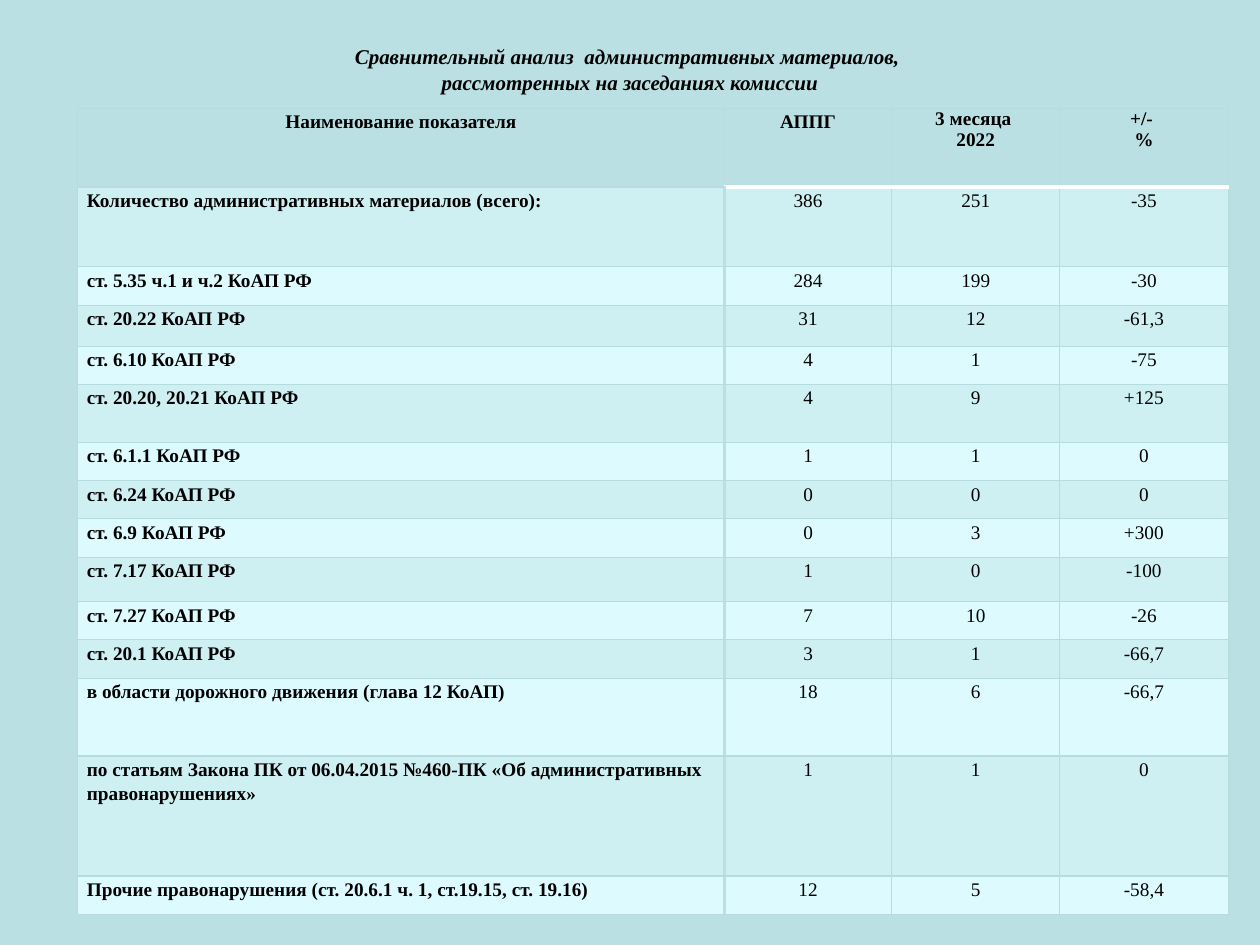
from lxml import etree
from pptx import Presentation, util as u
from pptx.dml.color import RGBColor
from pptx.enum import text
from pptx.oxml import ns

THEME = {
    "font": "Times New Roman",
    "title_size": 12,
    "table_size": 11,
    "ink": "000000",
    "background": "BBE0E3",
    "odd_row": "CFF0F3",
    "even_row": "DDFBFF",
    "grid": ("B6DCDF", 0.75),
    "label_divider": ("BBE0E3", 2),
    "header_rule": ("FFFFFF", 2),
}
TITLE = "Сравнительный анализ  административных материалов, \vрассмотренных на заседаниях комиссии"
TITLE_BOX = {"left": 1.27, "top": 0.76, "width": 22.86, "height": 3.18}
TABLE_LEFT, TABLE_TOP = 1.57, 2.18
COLUMN_WIDTHS = (13.03, 3.38, 3.38, 3.4)
LEFT_ALIGNED_ROWS = (2, 13)
ROWS = [
    (1.59, "Наименование показателя", "АППГ", "3 месяца \n2022", "+/- \n%"),
    (1.61, "Количество административных материалов (всего):", "386", "251", "-35"),
    (0.77, "ст. 5.35 ч.1 и ч.2 КоАП РФ", "284", "199", "-30"),
    (0.83, "ст. 20.22 КоАП РФ", "31", "12", "-61,3"),
    (0.77, "ст. 6.10 КоАП РФ", "4", "1", "-75"),
    (1.17, "ст. 20.20, 20.21 КоАП РФ", "4", "9", "+125"),
    (0.77, "ст. 6.1.1 КоАП РФ", "1", "1", "0"),
    (0.77, "ст. 6.24 КоАП РФ", "0", "0", "0"),
    (0.77, "ст. 6.9 КоАП РФ", "0", "3", "+300"),
    (0.9, "ст. 7.17 КоАП РФ", "1", "0", "-100"),
    (0.77, "ст. 7.27 КоАП РФ", "7", "10", "-26"),
    (0.77, "ст. 20.1 КоАП РФ", "3", "1", "-66,7"),
    (1.57, "в области дорожного движения (глава 12 КоАП)", "18", "6", "-66,7"),
    (2.42, "по статьям Закона ПК от 06.04.2015 №460-ПК «Об административных правонарушениях»",
     "1", "1", "0"),
    (0.77, "Прочие правонарушения (ст. 20.6.1 ч. 1, ст.19.15, ст. 19.16)", "12", "5", "-58,4"),
]


def apply(target, values):
    for name, value in values.items():
        setattr(target, name, value)


def paint(fill, color):
    fill.solid()
    fill.fore_color.rgb = RGBColor.from_string(color)


def format_font(font, size, **values):
    apply(font, {"name": THEME["font"], "size": u.Pt(size), **values})
    font.color.rgb = RGBColor.from_string(THEME["ink"])


def cell_edges(row, column):
    edges = dict.fromkeys(("lnL", "lnR", "lnT", "lnB"), THEME["grid"])
    if row > 0 and column < 2:
        edges["lnR" if column == 0 else "lnL"] = THEME["label_divider"]
    if row < 2 and column > 0:
        edges["lnB" if row == 0 else "lnT"] = THEME["header_rule"]
    return edges


def draw_edges(cell, edges):
    properties = cell._tc.get_or_add_tcPr()
    for tag, (color, width) in edges.items():
        line = etree.SubElement(properties, ns.qn(f"a:{tag}"), w=str(u.Pt(width)))
        fill = etree.SubElement(line, ns.qn("a:solidFill"))
        etree.SubElement(fill, ns.qn("a:srgbClr"), val=color)


def row_color(row):
    if row == 0:
        return THEME["background"]
    return THEME["odd_row"] if row % 2 else THEME["even_row"]


def alignment(row, column):
    if row == 0 or column > 0:
        return text.PP_ALIGN.CENTER
    return text.PP_ALIGN.LEFT if row in LEFT_ALIGNED_ROWS else text.PP_ALIGN.JUSTIFY


def fill_cell(cell, content, row, column):
    draw_edges(cell, cell_edges(row, column))
    paint(cell.fill, row_color(row))
    apply(cell, {"margin_left": u.Cm(0.18), "margin_right": u.Cm(0.18),
                 "margin_top": 0, "margin_bottom": 0,
                 "vertical_anchor": text.MSO_ANCHOR.TOP})
    cell.text_frame.text = content
    for paragraph in cell.text_frame.paragraphs:
        paragraph.alignment = alignment(row, column)
        if "\n" not in content:
            apply(paragraph, {"line_spacing": 1.15, "space_after": u.Pt(10)})
        for run in paragraph.runs:
            format_font(run.font, THEME["table_size"], bold=row == 0 or column == 0)


def add_title(slide):
    title = slide.shapes.title
    apply(title, {name: u.Cm(value) for name, value in TITLE_BOX.items()})
    frame = title.text_frame
    frame.text = TITLE
    apply(frame, {"word_wrap": True, "auto_size": text.MSO_AUTO_SIZE.NONE,
                  "vertical_anchor": text.MSO_ANCHOR.TOP})
    paragraph = frame.paragraphs[0]
    paragraph.alignment = text.PP_ALIGN.CENTER
    for run in paragraph.runs:
        format_font(run.font, THEME["title_size"], bold=True, italic=True)


def add_comparison_table(slide):
    heights = [row[0] for row in ROWS]
    table = slide.shapes.add_table(
        len(ROWS), len(COLUMN_WIDTHS), u.Cm(TABLE_LEFT), u.Cm(TABLE_TOP),
        u.Cm(sum(COLUMN_WIDTHS)), u.Cm(sum(heights))).table
    apply(table, {"first_row": False, "horz_banding": False})
    for column, width in zip(table.columns, COLUMN_WIDTHS):
        column.width = u.Cm(width)
    for row, (height, *contents) in enumerate(ROWS):
        table.rows[row].height = u.Cm(height)
        for column, content in enumerate(contents):
            fill_cell(table.cell(row, column), content, row, column)


def main():
    presentation = Presentation()
    apply(presentation, {"slide_width": u.Cm(25.4), "slide_height": u.Cm(19.05)})
    slide = presentation.slides.add_slide(presentation.slide_layouts.get_by_name("Title Only"))
    paint(slide.background.fill, THEME["background"])
    add_title(slide)
    add_comparison_table(slide)
    presentation.save("out.pptx")


if __name__ == "__main__":
    main()
